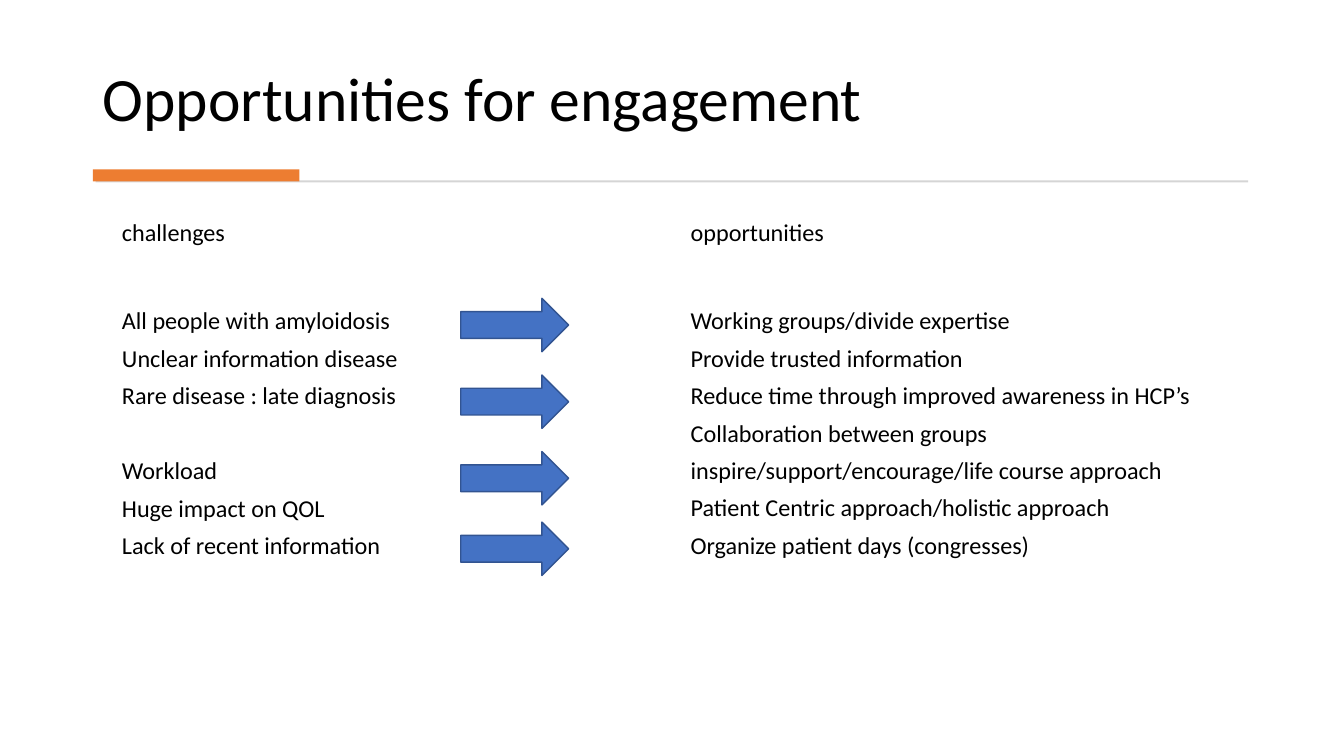
import pptx
import pptx.util
import pptx.dml.color
import pptx.enum.shapes
import pptx.enum.text
import pptx.oxml.ns
import lxml.etree

Inches = pptx.util.Inches
Pt = pptx.util.Pt
Shape = pptx.enum.shapes.MSO_SHAPE
Anchor = pptx.enum.text.MSO_ANCHOR

theme = {
    "font": "Calibri",
    "title": 44,
    "body": 17.3,
    "after": 6,
    "gap": 27,
    "ink": "000000",
    "rule": "D5D5D5",
    "accent": "ED7D31",
    "arrow": "4472C4",
    "edge": "325491",
}


def write(holder, box, groups, size, anchor):
    holder.left, holder.top, holder.width, holder.height = map(Inches, box)
    frame = holder.text_frame
    frame.word_wrap = True
    frame.auto_size = pptx.enum.text.MSO_AUTO_SIZE.NONE
    frame.vertical_anchor = anchor
    para = None
    for group in groups:
        for line in group:
            first = para is None
            para = frame.paragraphs[0] if first else frame.add_paragraph()
            para.alignment = pptx.enum.text.PP_ALIGN.LEFT
            para.line_spacing = 1.0
            para.space_before = Pt(theme["gap"] if line == group[0] and not first else 0)
            para.space_after = Pt(theme["after"])
            props = para._p.get_or_add_pPr()
            props.set("marL", "0")
            props.set("indent", "0")
            lxml.etree.SubElement(props, pptx.oxml.ns.qn("a:buNone"))
            run = para.add_run()
            run.text = line
            run.font.name = theme["font"]
            run.font.size = Pt(size)
            run.font.bold = False
            run.font.color.rgb = pptx.dml.color.RGBColor.from_string(theme["ink"])


def draw(kind, box, fill, edge=None):
    shape = slide.shapes.add_shape(kind, *map(Inches, box))
    shape.shadow.inherit = False
    shape.fill.solid()
    shape.fill.fore_color.rgb = pptx.dml.color.RGBColor.from_string(theme[fill])
    if edge:
        shape.line.color.rgb = pptx.dml.color.RGBColor.from_string(theme[edge])
        shape.line.width = Pt(1)
    else:
        shape.line.fill.background()


deck = pptx.Presentation()
deck.slide_width = Inches(13.33)
deck.slide_height = Inches(7.5)
slide = deck.slides.add_slide(deck.slide_layouts.get_by_name("Comparison"))

title = slide.shapes.title
write(title, (0.92, 0.28, 11.49, 1.11), [["Opportunities for engagement"]],
      theme["title"], Anchor.BOTTOM)
title.text_frame.paragraphs[0].line_spacing = 0.9
title.text_frame.paragraphs[0].space_after = Pt(0)

draw(Shape.RECTANGLE, (0.95, 1.79, 11.43, 0.02), "rule")
draw(Shape.RECTANGLE, (0.92, 1.68, 2.05, 0.12), "accent")

columns = [
    (1, 1.11, 5.45, "challenges", [
        ["All people with amyloidosis",
         "Unclear information disease",
         "Rare disease : late diagnosis"],
        ["Workload",
         "Huge impact on QOL",
         "Lack of recent information"],
    ]),
    (3, 6.75, 5.48, "opportunities", [
        ["Working groups/divide expertise",
         "Provide trusted information",
         "Reduce time through improved awareness in HCP’s",
         "Collaboration between groups",
         "inspire/support/encourage/life course approach",
         "Patient Centric approach/holistic approach",
         "Organize patient days (congresses)"],
    ]),
]
for index, left, width, head, groups in columns:
    write(slide.placeholders[index], (left, 2.11, width, 0.87), [[head]],
          theme["body"], Anchor.TOP)
    write(slide.placeholders[index + 1], (left, 2.98, width, 3.89), groups,
          theme["body"], Anchor.TOP)

for top in (2.96, 3.72, 4.48, 5.18):
    draw(Shape.RIGHT_ARROW, (4.57, top, 1.07, 0.53), "arrow", "edge")

deck.save("out.pptx")
